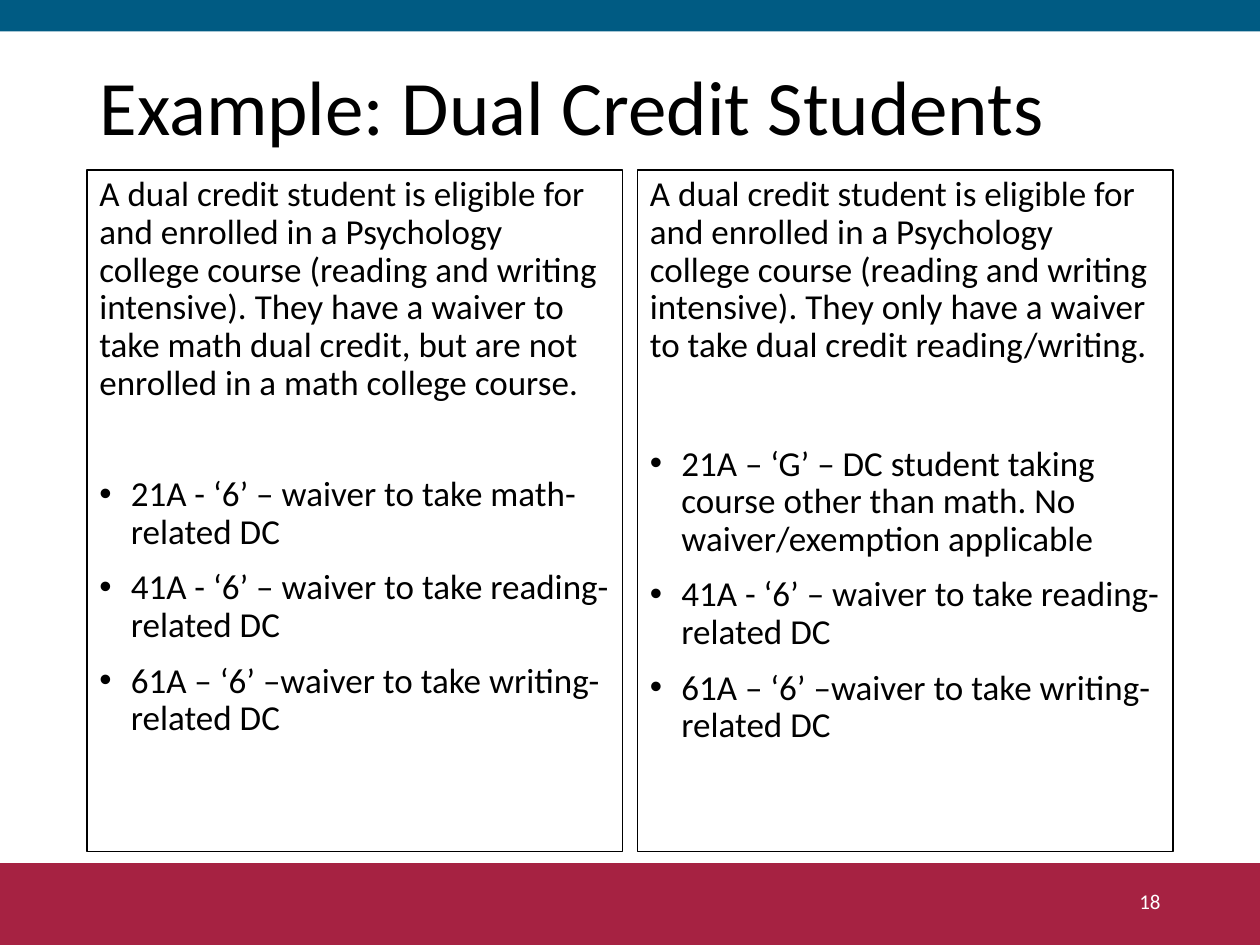
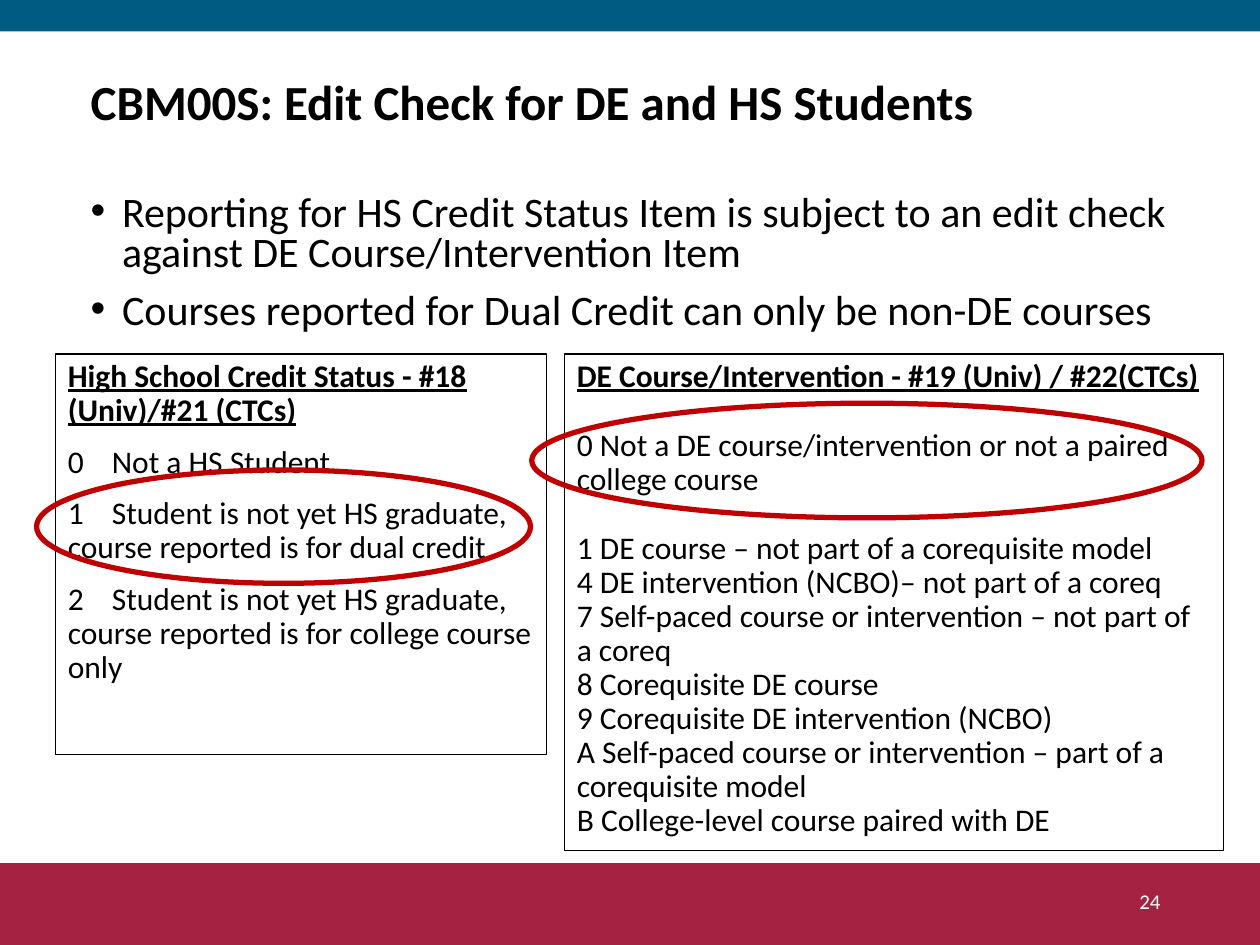
from lxml import etree
from pptx import Presentation
from pptx.dml.color import RGBColor
from pptx.enum.shapes import MSO_SHAPE
from pptx.enum.text import MSO_ANCHOR, MSO_AUTO_SIZE, PP_ALIGN
from pptx.oxml.ns import qn
from pptx.util import Inches, Pt

RECT, OVAL = MSO_SHAPE.RECTANGLE, MSO_SHAPE.OVAL
TOP, MIDDLE = MSO_ANCHOR.TOP, MSO_ANCHOR.MIDDLE
LEFT, RIGHT = PP_ALIGN.LEFT, PP_ALIGN.RIGHT
NO_AUTOFIT = MSO_AUTO_SIZE.NONE

BLUE = RGBColor(0x00, 0x5B, 0x83)
MAROON = RGBColor(0xA6, 0x22, 0x42)
RED = RGBColor(0xC0, 0x00, 0x00)
BLACK = RGBColor(0x00, 0x00, 0x00)
WHITE = RGBColor(0xFF, 0xFF, 0xFF)
FONT = "Calibri"
TITLE_ONLY = 5
BULLET_INDENT = Inches(0.25)
CODE_TAB = Inches(0.35)


class Deck:
    """Holds the shared style and the slide being built."""

    def __init__(self, prs):
        self.prs = prs
        self.slide = None

    def new_slide(self, number, title, box, size, bold=False):
        self.slide = self.prs.slides.add_slide(self.prs.slide_layouts[TITLE_ONLY])
        # Bands
        self.shape(RECT, (0, 6.85, 10, 0.65), fill=MAROON)
        self.shape(RECT, (0, 0, 10, 0.25), fill=BLUE)
        # Title
        sp = self.slide.shapes.title
        sp.left, sp.top, sp.width, sp.height = map(Inches, box)
        tf = self.frame(sp, MIDDLE)
        self.paragraph(tf, title, size, bold=bold)
        # Slide number
        self.text((7.06, 6.95, 2.25, 0.4), [dict(text=number)], 12,
                  color=WHITE, align=RIGHT, anchor=MIDDLE, spacing=1.0)

    def shape(self, kind, box, fill=None, line=None, width=0.75):
        sp = self.slide.shapes.add_shape(kind, *map(Inches, box))
        sp.shadow.inherit = False
        if fill is None:
            sp.fill.background()
        else:
            sp.fill.solid()
            sp.fill.fore_color.rgb = fill
        if line is None:
            sp.line.fill.background()
        else:
            sp.line.color.rgb = line
            sp.line.width = Pt(width)
        return sp

    def frame(self, sp, anchor=TOP):
        tf = sp.text_frame
        tf.word_wrap = True
        tf.auto_size = NO_AUTOFIT
        tf.vertical_anchor = anchor
        return tf

    def text(self, box, items, size, anchor=TOP, **style):
        sp = self.slide.shapes.add_textbox(*map(Inches, box))
        self.fill_frame(self.frame(sp, anchor), items, size, **style)

    def panel(self, box, items, size, **style):
        sp = self.shape(RECT, box, line=BLACK)
        self.fill_frame(self.frame(sp), items, size, **style)

    def fill_frame(self, tf, items, size, before=0, **style):
        for i, item in enumerate(items):
            gap = item.get("before", before) if i else 0
            self.paragraph(tf, size=size, first=i == 0,
                           **{**style, **item, "before": gap})

    def paragraph(self, tf, text, size, first=True, before=0, spacing=0.9,
                  align=LEFT, color=BLACK, bold=False, underline=False,
                  bullet=False, tab=False):
        p = tf.paragraphs[0] if first else tf.add_paragraph()
        pPr = p._p.get_or_add_pPr()
        if bullet:
            pPr.set("marL", str(BULLET_INDENT))
            pPr.set("indent", str(-BULLET_INDENT))
            etree.SubElement(pPr, qn("a:buFont"), typeface="Arial")
            etree.SubElement(pPr, qn("a:buChar"), char="•")
        if tab:
            tabs = etree.SubElement(pPr, qn("a:tabLst"))
            etree.SubElement(tabs, qn("a:tab"), pos=str(CODE_TAB), algn="l")
        p.alignment = align
        p.line_spacing = spacing
        p.space_before = Pt(before)
        r = p.add_run()
        r.text = text
        r.font.name = FONT
        r.font.size = Pt(size)
        r.font.bold = bold
        r.font.underline = underline
        r.font.color.rgb = color

    def ring(self, box):
        self.shape(OVAL, box, line=RED, width=3)


def dual_credit_slide(deck):
    deck.new_slide("18", "Example: Dual Credit Students", (0.69, 0.4, 8.62, 0.95), 44)
    intro = ("A dual credit student is eligible for and enrolled in a Psychology "
             "college course (reading and writing intensive). ")
    shared_codes = ["41A - ‘6’ – waiver to take reading-related DC",
                    "61A – ‘6’ –waiver to take writing-related DC"]
    # Situation, first code and the gap between them
    cases = [
        ("They have a waiver to take math dual credit, but are not enrolled "
         "in a math college course.",
         "21A - ‘6’ – waiver to take math-related DC", 42),
        ("They only have a waiver to take dual credit reading/writing.",
         "21A – ‘G’ – DC student taking course other than math. "
         "No waiver/exemption applicable", 46),
    ]
    for col, (situation, first_code, gap) in enumerate(cases):
        items = [dict(text=intro + situation),
                 dict(text=first_code, bullet=True, before=gap)]
        items += [dict(text=code, bullet=True) for code in shared_codes]
        deck.panel((0.69 + col * 4.37, 1.35, 4.25, 5.41), items, 20, before=10)


def edit_check_slide(deck):
    deck.new_slide("24", "CBM00S: Edit Check for DE and HS Students",
                   (0.62, 0.41, 8.62, 0.84), 28, bold=True)
    # Rules
    rules = ["Reporting for HS Credit Status Item is subject to an edit check "
             "against DE Course/Intervention Item",
             "Courses reported for Dual Credit can only be non-DE courses"]
    deck.text((0.62, 1.5, 9.08, 1.3), [dict(text=rule) for rule in rules], 24,
              before=10, spacing=0.8, bullet=True)
    # Course and intervention codes
    heading = dict(bold=True, underline=True)
    course_codes = ["4 DE intervention (NCBO)– not part of a coreq",
                    "7 Self-paced course or intervention – not part of a coreq",
                    "8 Corequisite DE course",
                    "9 Corequisite DE intervention (NCBO)",
                    "A Self-paced course or intervention – part of a corequisite model",
                    "B College-level course paired with DE"]
    items = [dict(text="DE Course/Intervention - #19 (Univ) / #22(CTCs)", **heading),
             dict(text="0 Not a DE course/intervention or not a paired college course",
                  before=20),
             dict(text="1 DE course – not part of a corequisite model", before=20)]
    items += [dict(text=code) for code in course_codes]
    deck.panel((4.48, 2.81, 5.23, 3.94), items, 18)
    # High school credit codes
    statuses = ["Not a HS Student",
                "Student is not yet HS graduate, course reported is for dual credit",
                "Student is not yet HS graduate, course reported is for college "
                "course only"]
    items = [dict(text="High School Credit Status - #18 (Univ)/#21 (CTCs)", **heading)]
    items += [dict(text=f"{code}\t{status}", tab=True)
              for code, status in enumerate(statuses)]
    deck.panel((0.44, 2.81, 3.9, 3.18), items, 18, before=10)
    # Matching pair of codes
    deck.ring((0.29, 3.73, 3.92, 0.9))
    deck.ring((4.22, 3.2, 5.32, 0.91))


def main():
    prs = Presentation()
    prs.slide_width, prs.slide_height = Inches(10), Inches(7.5)
    deck = Deck(prs)
    dual_credit_slide(deck)
    edit_check_slide(deck)
    prs.save("out.pptx")


if __name__ == "__main__":
    main()
